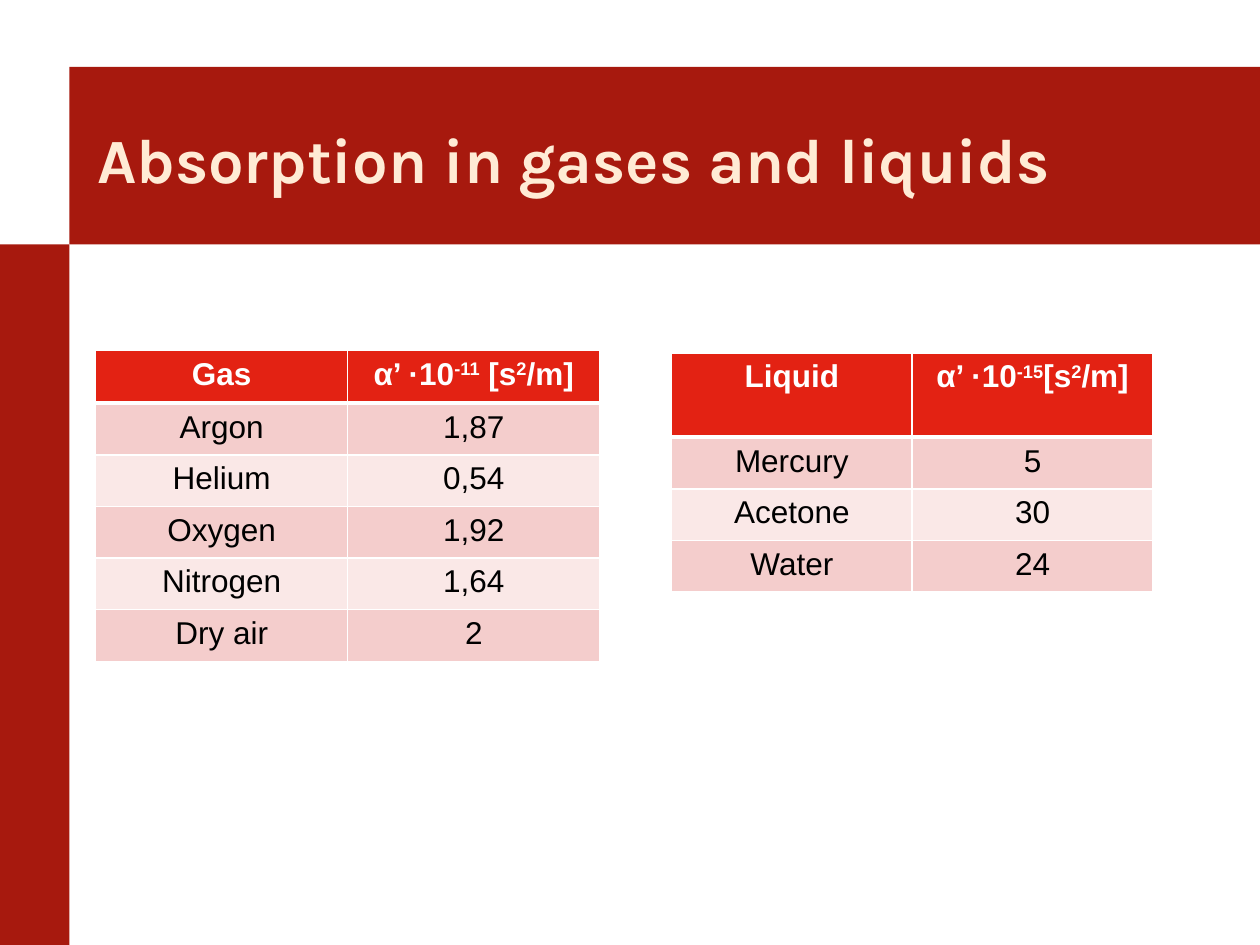
"""Build the slide on absorption in gases and liquids, with two tables."""
from lxml import etree
from pptx import Presentation
from pptx.dml.color import RGBColor
from pptx.enum.shapes import MSO_SHAPE
from pptx.enum.text import MSO_ANCHOR, MSO_AUTO_SIZE, PP_ALIGN
from pptx.oxml.ns import qn
from pptx.util import Inches, Pt

RECTANGLE = MSO_SHAPE.RECTANGLE
MIDDLE = MSO_ANCHOR.MIDDLE
NO_AUTOFIT = MSO_AUTO_SIZE.NONE
LEFT, CENTER = PP_ALIGN.LEFT, PP_ALIGN.CENTER

DARK_RED = RGBColor(0xA7, 0x19, 0x0E)
CREAM = RGBColor(0xFF, 0xEB, 0xD5)
HEADER_RED = RGBColor(0xE3, 0x22, 0x13)
BAND_DARK = RGBColor(0xF4, 0xCD, 0xCC)
BAND_LIGHT = RGBColor(0xFA, 0xE8, 0xE7)
WHITE = RGBColor(0xFF, 0xFF, 0xFF)
BLACK = RGBColor(0x00, 0x00, 0x00)

ROW_HEIGHT = 0.41
GAS_ROWS = [
    ("Gas", "α’ ·10|-11| [s|2|/m]"),
    ("Argon", "1,87"),
    ("Helium", "0,54"),
    ("Oxygen", "1,92"),
    ("Nitrogen", "1,64"),
    ("Dry air", "2"),
]
LIQUID_ROWS = [
    ("Liquid", "α’ ·10|-15|[s|2|/m]"),
    ("Mercury", "5"),
    ("Acetone", "30"),
    ("Water", "24"),
]


def set_borders(cell, top, bottom):
    """Draw white borders of the given point widths, with 1 point at the sides."""
    properties = cell._tc.get_or_add_tcPr()
    for side, width in (("L", 1), ("R", 1), ("T", top), ("B", bottom)):
        line = etree.SubElement(properties, qn(f"a:ln{side}"), w=str(Pt(width)))
        fill = etree.SubElement(line, qn("a:solidFill"))
        etree.SubElement(fill, qn("a:srgbClr"), val=str(WHITE))


def add_data_table(slide, left, top, column_width, header_height, rows):
    """Add a banded table; text between bars in a cell is superscript."""
    heights = [header_height] + [ROW_HEIGHT] * (len(rows) - 1)
    table = slide.shapes.add_table(
        len(rows), 2, Inches(left), Inches(top),
        Inches(2 * column_width), Inches(sum(heights)),
    ).table
    for column in table.columns:
        column.width = Inches(column_width)
    for row_index, texts in enumerate(rows):
        table.rows[row_index].height = Inches(heights[row_index])
        is_header = row_index == 0
        band = BAND_DARK if row_index % 2 else BAND_LIGHT
        for column_index, text in enumerate(texts):
            cell = table.cell(row_index, column_index)
            set_borders(cell, 3 if row_index == 1 else 1, 3 if is_header else 1)
            cell.fill.solid()
            cell.fill.fore_color.rgb = HEADER_RED if is_header else band
            paragraph = cell.text_frame.paragraphs[0]
            paragraph.alignment = CENTER
            for part_index, part in enumerate(text.split("|")):
                run = paragraph.add_run()
                run.text = part
                run.font.name = "Arial"
                run.font.size = Pt(18)
                run.font.bold = is_header
                run.font.color.rgb = WHITE if is_header else BLACK
                if part_index % 2:
                    run._r.get_or_add_rPr().set("baseline", "30000")


presentation = Presentation()
presentation.slide_width = Inches(10)
presentation.slide_height = Inches(7.5)
slide = presentation.slides.add_slide(presentation.slide_layouts[5])

title = slide.shapes.title
title.left, title.top = Inches(0.67), Inches(0.69)
title.width, title.height = Inches(9.21), Inches(1.13)
title.text_frame.text = "Absorption in gases and liquids"
title.text_frame.vertical_anchor = MIDDLE
title.text_frame.auto_size = NO_AUTOFIT
paragraph = title.text_frame.paragraphs[0]
paragraph.alignment = LEFT
font = paragraph.runs[0].font
font.name = "Karla"
font.size = Pt(36)
font.bold = True
font.color.rgb = CREAM

for bounds in ((0.55, 0.53, 9.45, 1.41), (0, 1.94, 0.55, 5.56)):
    bar = slide.shapes.add_shape(RECTANGLE, *map(Inches, bounds))
    bar.shadow.inherit = False
    bar.fill.solid()
    bar.fill.fore_color.rgb = DARK_RED
    bar.line.fill.background()
    title.element.addprevious(bar.element)

add_data_table(slide, 0.76, 2.78, 2, 0.42, GAS_ROWS)
add_data_table(slide, 5.33, 2.8, 1.91, 0.67, LIQUID_ROWS)

presentation.save("out.pptx")
